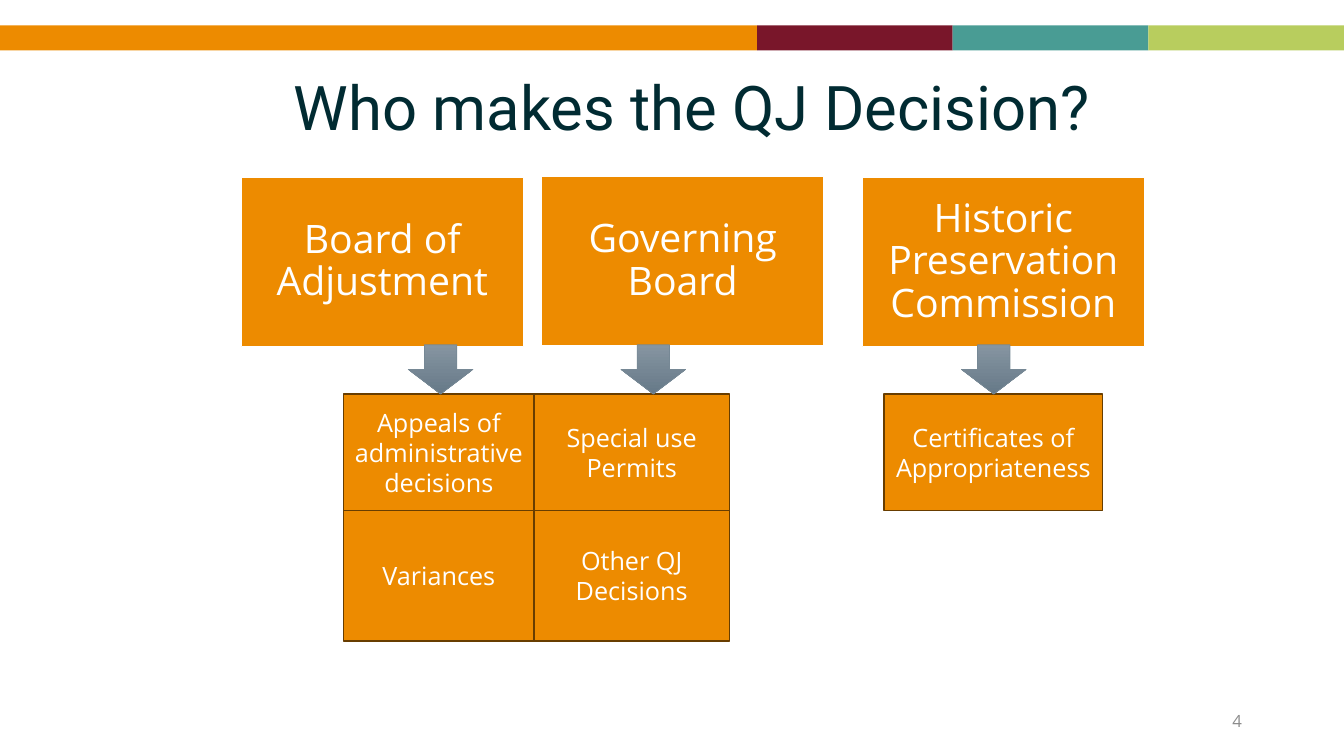
import pptx
import pptx.util
import pptx.dml.color
import pptx.enum.shapes
import pptx.enum.text

Cm = pptx.util.Cm
Pt = pptx.util.Pt
Kind = pptx.enum.shapes.MSO_SHAPE
Align = pptx.enum.text.PP_ALIGN
Anchor = pptx.enum.text.MSO_ANCHOR

ORANGE = "ED8B00"
WHITE = "FFFFFF"


def color(code):
    return pptx.dml.color.RGBColor.from_string(code)


def write(shape, text, size, font, ink, align=Align.CENTER, space=1.0):
    frame = shape.text_frame
    frame.word_wrap = True
    frame.vertical_anchor = Anchor.MIDDLE
    frame.text = text
    par = frame.paragraphs[0]
    par.alignment = align
    par.line_spacing = space
    run = par.runs[0]
    run.font.size = Pt(size)
    run.font.name = font
    run.font.color.rgb = color(ink)


def draw(slide, kind, box, fill=None, line=None, width=1):
    shape = slide.shapes.add_shape(kind, *map(Cm, box))
    shape.shadow.inherit = False
    if fill:
        shape.fill.solid()
        shape.fill.fore_color.rgb = color(fill)
    if line:
        shape.line.color.rgb = color(line)
        shape.line.width = Pt(width)
    else:
        shape.line.fill.background()
    return shape


def add_band(slide, left, top, width, height):
    part = 4.93
    first = width - 3 * part
    draw(slide, Kind.RECTANGLE, (left, top, first, height), ORANGE)
    for i, fill in enumerate(("79162A", "499C94", "B8CD5E")):
        x = left + first + i * part
        draw(slide, Kind.RECTANGLE, (x, top, part, height), fill)


def add_title(slide, left, top, width, height):
    title = slide.shapes.title
    title.left, title.top = Cm(left), Cm(top)
    title.width, title.height = Cm(width), Cm(height)
    write(title, "Who makes the QJ Decision?", 44, "Roboto", "012B32", space=0.9)


def add_boards(slide, left, top, width, height):
    boards = (
        (0, 0.02, "Board of Adjustment"),
        (7.57, 0, "Governing Board"),
        (15.65, 0.02, "Historic Preservation Commission"),
    )
    for x, y, name in boards:
        box = (left + x, top + y, width, height)
        shape = draw(slide, Kind.RECTANGLE, box, ORANGE, WHITE)
        write(shape, name, 28, "Open Sans", WHITE, space=0.9)
        frame = shape.text_frame
        frame.margin_left = frame.margin_right = Cm(0.3)
        frame.margin_top = frame.margin_bottom = Cm(0.3)


def add_grid(slide, left, top, widths, heights, rows):
    y = top
    for height, row in zip(heights, rows):
        x = left
        for width, text in zip(widths, row):
            box = (x, y, width, height)
            shape = draw(slide, Kind.RECTANGLE, box, ORANGE, "683D00")
            write(shape, text, 18, "Open Sans", WHITE)
            x += width
        y += height


def add_arrow(slide, left, top, width, height):
    box = (left, top, width, height)
    arrow = draw(slide, Kind.DOWN_ARROW, box, line="768895", width=0.5)
    arrow.fill.gradient()
    arrow.fill.gradient_angle = 270
    for stop, (place, code) in zip(
        arrow.fill.gradient_stops, ((0, "8695A1"), (1, "667988"))
    ):
        stop.position = place
        stop.color.rgb = color(code)


def add_number(slide, left, top, width, height):
    box = slide.shapes.add_textbox(*map(Cm, (left, top, width, height)))
    write(box, "4", 12, "Open Sans", "8C8C8C", Align.RIGHT)


def main():
    deck = pptx.Presentation()
    deck.slide_width, deck.slide_height = Cm(33.87), Cm(19.05)
    slide = deck.slides.add_slide(deck.slide_layouts[5])
    add_band(slide, 0, 0.64, 33.87, 0.63)
    add_title(slide, 2.84, 0.94, 29.21, 3.68)
    add_boards(slide, 6.08, 4.45, 7.11, 4.27)
    add_number(slide, 23.93, 17.65, 7.62, 1.02)
    add_grid(slide, 22.28, 9.93, [5.51], [2.94], [["Certificates of Appropriateness"]])
    add_grid(
        slide, 8.66, 9.93, [4.8, 4.92], [2.94, 3.28],
        [
            ["Appeals of administrative decisions", "Special use Permits"],
            ["Variances", "Other QJ Decisions"],
        ],
    )
    for x in (10.29, 15.65, 24.23):
        add_arrow(slide, x, 8.69, 1.63, 1.24)
    deck.save("out.pptx")


if __name__ == "__main__":
    main()
